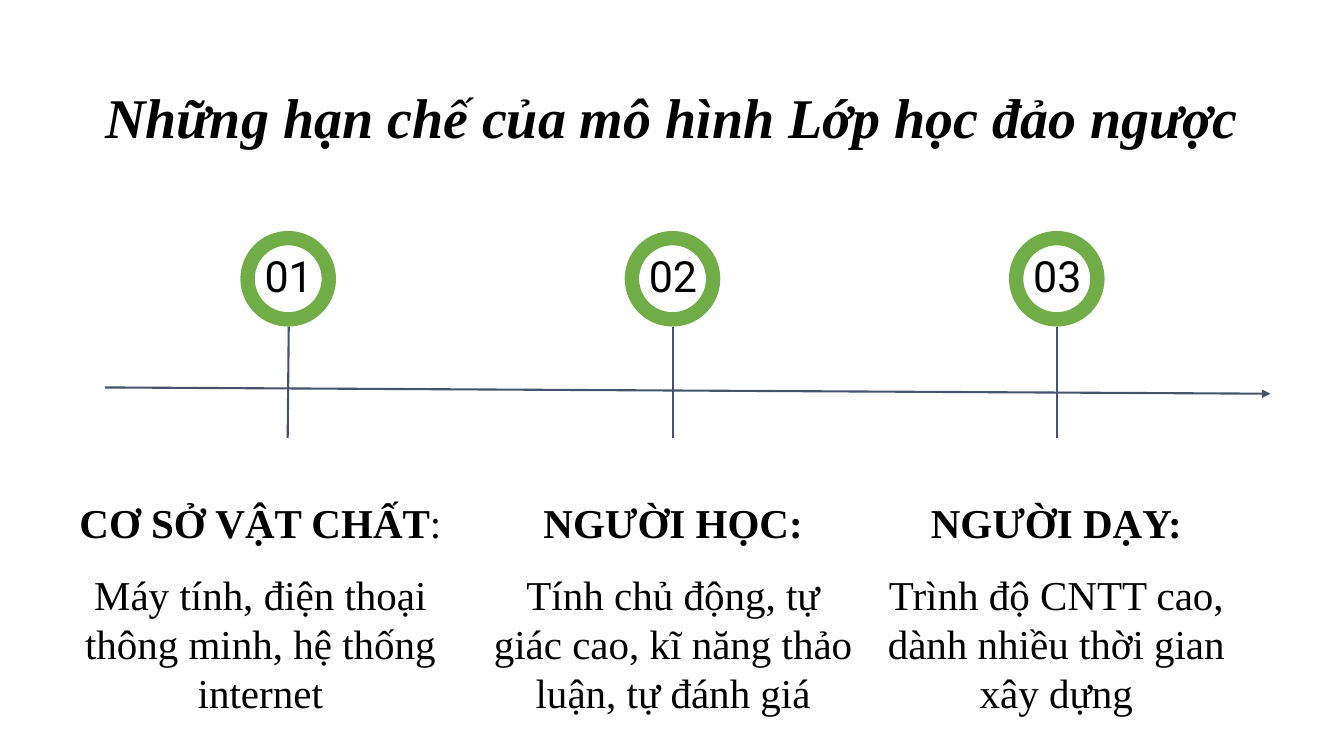
from dataclasses import dataclass

from lxml.etree import SubElement
from pptx import Presentation
from pptx.dml.color import RGBColor
from pptx.enum.shapes import MSO_CONNECTOR as Connector, MSO_SHAPE as Shape
from pptx.enum.text import MSO_ANCHOR as Anchor, PP_ALIGN as Align
from pptx.oxml.ns import qn
from pptx.slide import Slide
from pptx.text.text import Font, TextFrame
from pptx.util import Emu, Pt

BLACK = RGBColor(0x00, 0x00, 0x00)
GREEN = RGBColor(0x70, 0xAD, 0x47)
SLATE = RGBColor(0x44, 0x54, 0x6A)
SERIF, SANS = "Times New Roman", "Roboto"

RING_LEFT, RING_TOP, RING_SIZE, RING_STEP = 229, 220, 91, 366
STEM_BOTTOM, BODY_TOP = 417, 474


def px(length: int) -> Emu:
    return Emu(length * 9525)


@dataclass
class Limitation:
    number: str
    heading: str
    colon_bold: bool
    detail: str
    left: int
    width: int
    stem_lean: int = 0


LIMITATIONS = [
    Limitation("01", "CƠ SỞ VẬT CHẤT", False,
               "Máy tính, điện thoại thông minh, hệ thống internet", 49, 398, -1),
    Limitation("02", "NGƯỜI HỌC", True,
               "Tính chủ động, tự giác cao, kĩ năng thảo luận, tự đánh giá", 468, 346),
    Limitation("03", "NGƯỜI DẠY", True,
               "Trình độ CNTT cao, dành nhiều thời gian xây dựng", 833, 346),
]


def style(font: Font, name: str, size: float) -> None:
    font.name, font.size, font.color.rgb = name, Pt(size), BLACK


def add_text_frame(page: Slide, left: int, top: int, width: int, height: int) -> TextFrame:
    frame = page.shapes.add_textbox(px(left), px(top), px(width), px(height)).text_frame
    frame.word_wrap = True
    frame.margin_left = frame.margin_right = frame.margin_top = frame.margin_bottom = 0
    return frame


def add_line(page: Slide, x1: int, y1: int, x2: int, y2: int, arrow: bool = False) -> None:
    line = page.shapes.add_connector(Connector.STRAIGHT, px(x1), px(y1), px(x2), px(y2))
    line.line.color.rgb, line.line.width = SLATE, Pt(1.5)
    properties = line._element.spPr
    if arrow:
        SubElement(properties.find(qn("a:ln")), qn("a:tailEnd"), type="triangle")
    SubElement(properties, qn("a:effectLst"))


def add_title(page: Slide, text: str) -> None:
    para = add_text_frame(page, 100, 86, 1080, 60).paragraphs[0]
    para.text, para.line_spacing = text, 0.9
    style(para.font, SERIF, 40)
    para.font.bold = para.font.italic = True


def add_marker(page: Slide, item: Limitation, left: int) -> None:
    # Ring and stem
    ring = page.shapes.add_shape(Shape.DONUT, px(left), px(RING_TOP), px(RING_SIZE), px(RING_SIZE))
    ring.adjustments[0] = 0.15
    ring.shadow.inherit = False
    ring.fill.solid()
    ring.fill.fore_color.rgb = GREEN
    ring.line.fill.background()
    center = left + RING_SIZE // 2 + 1
    add_line(page, center, RING_TOP + RING_SIZE, center + item.stem_lean, STEM_BOTTOM)

    # Number inside the ring
    frame = add_text_frame(page, left + 7, 234, 78, 63)
    frame.vertical_anchor = Anchor.MIDDLE
    para = frame.paragraphs[0]
    para.text, para.alignment, para.line_spacing = item.number, Align.CENTER, 0.9
    style(para.font, SANS, 30.7)


def add_body(page: Slide, item: Limitation) -> None:
    frame = add_text_frame(page, item.left, BODY_TOP, item.width, 72)
    heading, detail = frame.paragraphs[0], frame.add_paragraph()
    for text, bold in ((item.heading, True), (":", item.colon_bold)):
        span = heading.add_run()
        span.text, span.font.bold = text, bold
    detail.text = item.detail
    for para in (heading, detail):
        para.alignment, para.space_after = Align.CENTER, Pt(16)
        style(para.font, SERIF, 29.3)


def main() -> None:
    deck = Presentation()
    deck.slide_width, deck.slide_height = px(1280), px(720)
    page = deck.slides.add_slide(deck.slide_layouts[6])

    add_title(page, "Những hạn chế của mô hình Lớp học đảo ngược")

    # Timeline
    for index, item in enumerate(LIMITATIONS):
        add_marker(page, item, RING_LEFT + index * RING_STEP)
    add_line(page, 100, 369, 1210, 375, arrow=True)

    # Explanations under the timeline
    for item in LIMITATIONS:
        add_body(page, item)

    deck.save("out.pptx")


if __name__ == "__main__":
    main()
